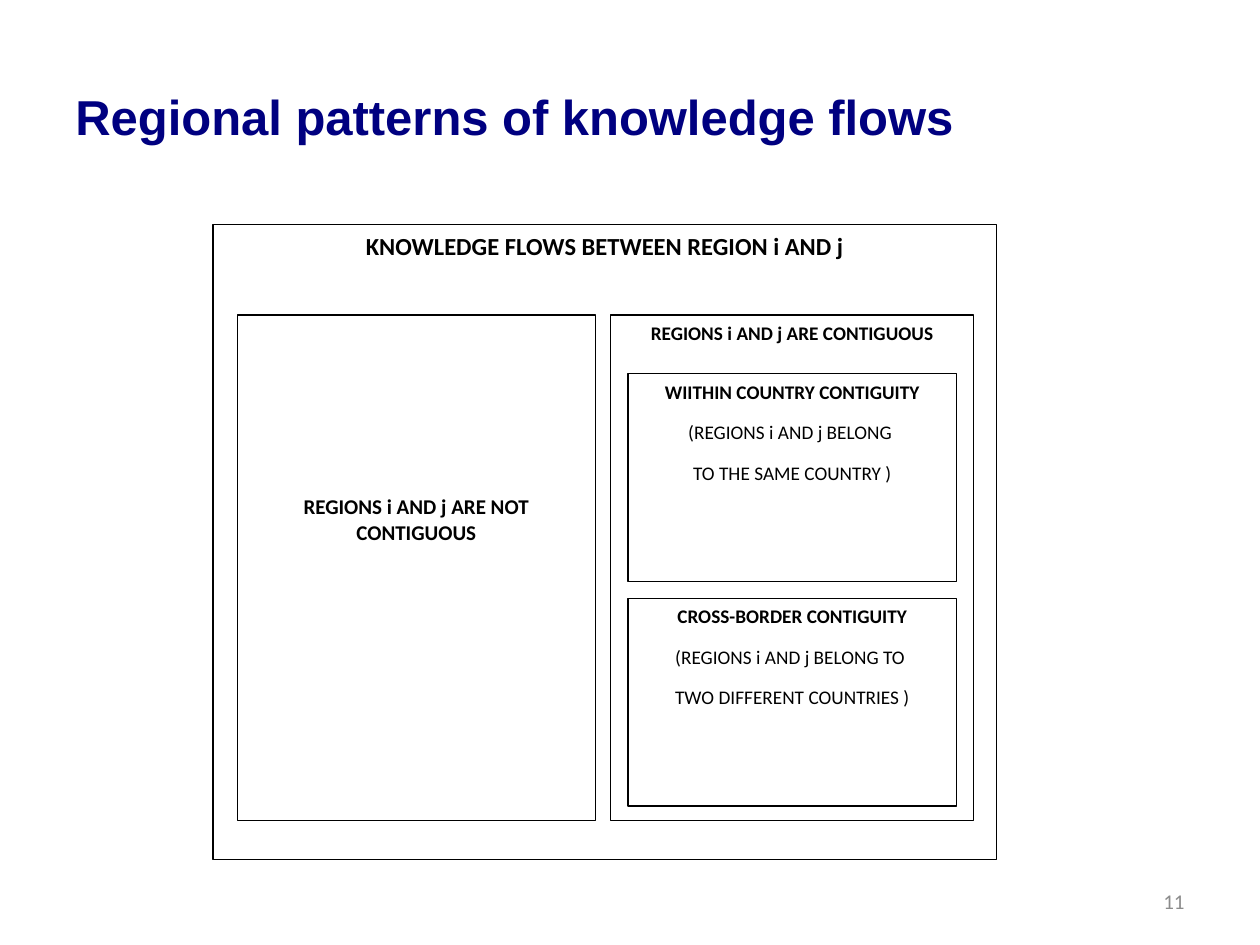
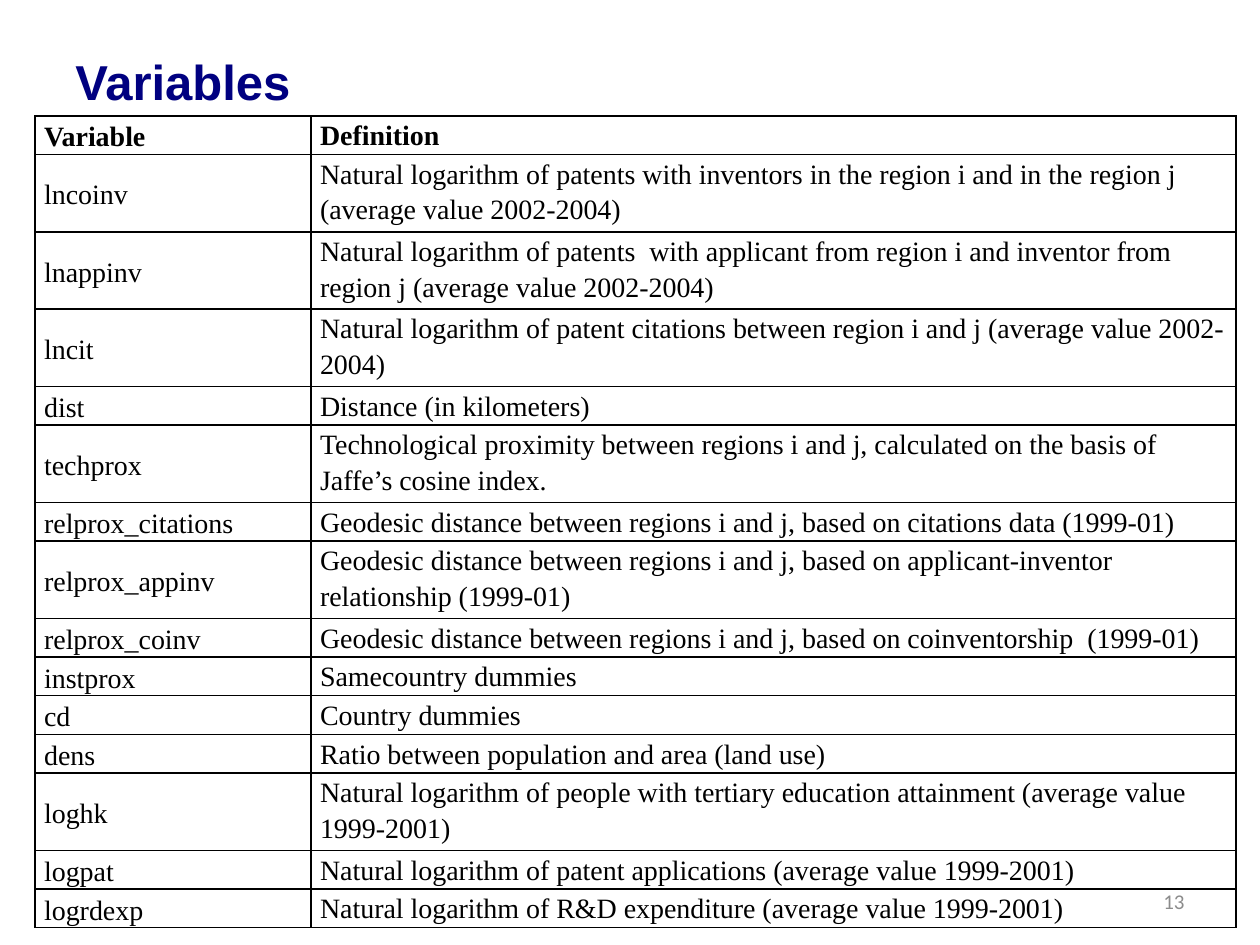
from dataclasses import dataclass

from lxml.etree import SubElement
from pptx import Presentation
from pptx.dml.color import RGBColor
from pptx.enum.shapes import MSO_SHAPE
from pptx.enum.text import MSO_ANCHOR, PP_ALIGN
from pptx.oxml.ns import qn
from pptx.util import Pt


@dataclass(frozen=True)
class Theme:
    navy: RGBColor = RGBColor(0, 0, 128)
    black: RGBColor = RGBColor(0, 0, 0)
    grey: RGBColor = RGBColor(0x8C, 0x8C, 0x8C)
    white: RGBColor = RGBColor(255, 255, 255)
    title_font: str = "Arial"
    diagram_font: str = "Calibri"
    table_font: str = "Times New Roman"
    title_size: int = 28
    table_size: int = 16
    heading_size: int = 14
    body_size: int = 12
    small_size: int = 11


THEME = Theme()

FLOWS = {"title": "Regional patterns of knowledge flows", "title_top": 46, "number": "11"}
VARIABLES = {"title": "Variables", "title_top": 26, "number": "13"}

ALL_FLOWS = ["KNOWLEDGE FLOWS BETWEEN REGION i AND j"]
NOT_CONTIGUOUS = ["REGIONS i AND j ARE NOT CONTIGUOUS"]
CONTIGUOUS = ["REGIONS i AND j ARE CONTIGUOUS"]
CONTIGUITY_KINDS = [
    ["WIITHIN COUNTRY CONTIGUITY", "(REGIONS i AND j BELONG ", "TO THE SAME COUNTRY )"],
    ["CROSS-BORDER CONTIGUITY", "(REGIONS i AND j BELONG TO ", "TWO DIFFERENT COUNTRIES )"],
]

DEFINITIONS = [
    ("Variable", "Definition", 1),
    ("lncoinv", "Natural logarithm of patents with inventors in the region i and in the region j (average value 2002-2004)", 2),
    ("lnappinv", "Natural logarithm of patents  with applicant from region i and inventor from region j (average value 2002-2004)", 2),
    ("lncit", "Natural logarithm of patent citations between region i and j (average value 2002-2004)", 2),
    ("dist", "Distance (in kilometers)", 1),
    ("techprox", "Technological proximity between regions i and j, calculated on the basis of Jaffe’s cosine index.", 2),
    ("relprox_citations", "Geodesic distance between regions i and j, based on citations data (1999-01)", 1),
    ("relprox_appinv", "Geodesic distance between regions i and j, based on applicant-inventor relationship (1999-01)", 2),
    ("relprox_coinv", "Geodesic distance between regions i and j, based on coinventorship  (1999-01)", 1),
    ("instprox", "Samecountry dummies", 1),
    ("cd", "Country dummies", 1),
    ("dens", "Ratio between population and area (land use)", 1),
    ("loghk", "Natural logarithm of people with tertiary education attainment (average value 1999-2001)", 2),
    ("logpat", "Natural logarithm of patent applications (average value 1999-2001)", 1),
    ("logrdexp", "Natural logarithm of R&D expenditure (average value 1999-2001)", 1),
]
COLUMN_WIDTHS = (157.7, 528.5)
LINE_HEIGHT = 22.1


def style(para, font, size, color, bold=False):
    for span in para.runs:
        span.font.name = font
        span.font.size = Pt(size)
        span.font.color.rgb = color
        span.font.bold = bold


def add_label(page, frame, text, font, size, color, bold=False, align=PP_ALIGN.LEFT):
    box = page.shapes.add_textbox(*map(Pt, frame))
    box.text_frame.word_wrap = True
    box.text_frame.vertical_anchor = MSO_ANCHOR.MIDDLE
    para = box.text_frame.paragraphs[0]
    para.text = text
    para.alignment = align
    style(para, font, size, color, bold)


def add_page(deck, content):
    page = deck.slides.add_slide(deck.slide_layouts[6])
    add_label(page, (36, content["title_top"], 650, 41), content["title"],
              THEME.title_font, THEME.title_size, THEME.navy, bold=True)
    add_label(page, (516, 500.5, 168, 28.8), content["number"],
              THEME.diagram_font, THEME.body_size, THEME.grey, align=PP_ALIGN.RIGHT)
    return page


def add_region_box(page, frame, lines, size, text_offset=3.6):
    box = page.shapes.add_shape(MSO_SHAPE.RECTANGLE, *map(Pt, frame))
    box.shadow.inherit = False
    box.fill.solid()
    box.fill.fore_color.rgb = THEME.white
    box.line.color.rgb = THEME.black
    box.line.width = Pt(0.75)
    text_frame = box.text_frame
    text_frame.word_wrap = True
    text_frame.vertical_anchor = MSO_ANCHOR.TOP
    text_frame.margin_top = Pt(text_offset)
    text_frame.text = "\n".join(lines)
    for index, para in enumerate(text_frame.paragraphs):
        para.alignment = PP_ALIGN.CENTER
        para.space_after = Pt(10)
        style(para, THEME.diagram_font, size, THEME.black, bold=index == 0)


def build_flows(deck):
    page = add_page(deck, FLOWS)
    top, height = 180, 288.7
    add_region_box(page, (121.7, 128.2, 447.8, 362.9), ALL_FLOWS, THEME.heading_size)
    add_region_box(page, (135.7, top, 204.5, height), NOT_CONTIGUOUS, THEME.body_size, 102.2)
    add_region_box(page, (349, top, 207.4, height), CONTIGUOUS, THEME.small_size)
    kind_height, gap = 118.8, 9.4
    for index, lines in enumerate(CONTIGUITY_KINDS):
        kind_top = top + 33.6 + index * (kind_height + gap)
        add_region_box(page, (358.8, kind_top, 188, kind_height), lines, THEME.small_size)


def outline_cell(cell):
    properties = cell._tc.get_or_add_tcPr()
    for index, side in enumerate(("a:lnL", "a:lnR", "a:lnT", "a:lnB")):
        line = properties.makeelement(qn(side), {"w": str(Pt(1))})
        fill = SubElement(line, qn("a:solidFill"))
        SubElement(fill, qn("a:srgbClr"), val=str(THEME.black))
        properties.insert(index, line)


def fill_cell(cell, text, anchor, bold):
    cell.fill.background()
    cell.margin_left = cell.margin_right = Pt(5.2)
    cell.margin_top = cell.margin_bottom = 0
    cell.vertical_anchor = anchor
    para = cell.text_frame.paragraphs[0]
    para.text = text
    para.line_spacing = 1.15
    style(para, THEME.table_font, THEME.table_size, THEME.black, bold)
    outline_cell(cell)


def build_variables(deck):
    page = add_page(deck, VARIABLES)
    height = LINE_HEIGHT * sum(lines for _, _, lines in DEFINITIONS)
    frame = (20, 66.2, sum(COLUMN_WIDTHS), height)
    table = page.shapes.add_table(len(DEFINITIONS), len(COLUMN_WIDTHS), *map(Pt, frame)).table
    table.horz_banding = False
    table.first_row = False
    for column, width in zip(table.columns, COLUMN_WIDTHS):
        column.width = Pt(width)
    for index, (name, definition, lines) in enumerate(DEFINITIONS):
        table.rows[index].height = Pt(lines * LINE_HEIGHT)
        fill_cell(table.cell(index, 0), name, MSO_ANCHOR.MIDDLE, bold=index == 0)
        fill_cell(table.cell(index, 1), definition, MSO_ANCHOR.TOP, bold=index == 0)


def main():
    deck = Presentation()
    deck.slide_width = Pt(720)
    deck.slide_height = Pt(540)
    build_flows(deck)
    build_variables(deck)
    deck.save("out.pptx")


if __name__ == "__main__":
    main()
